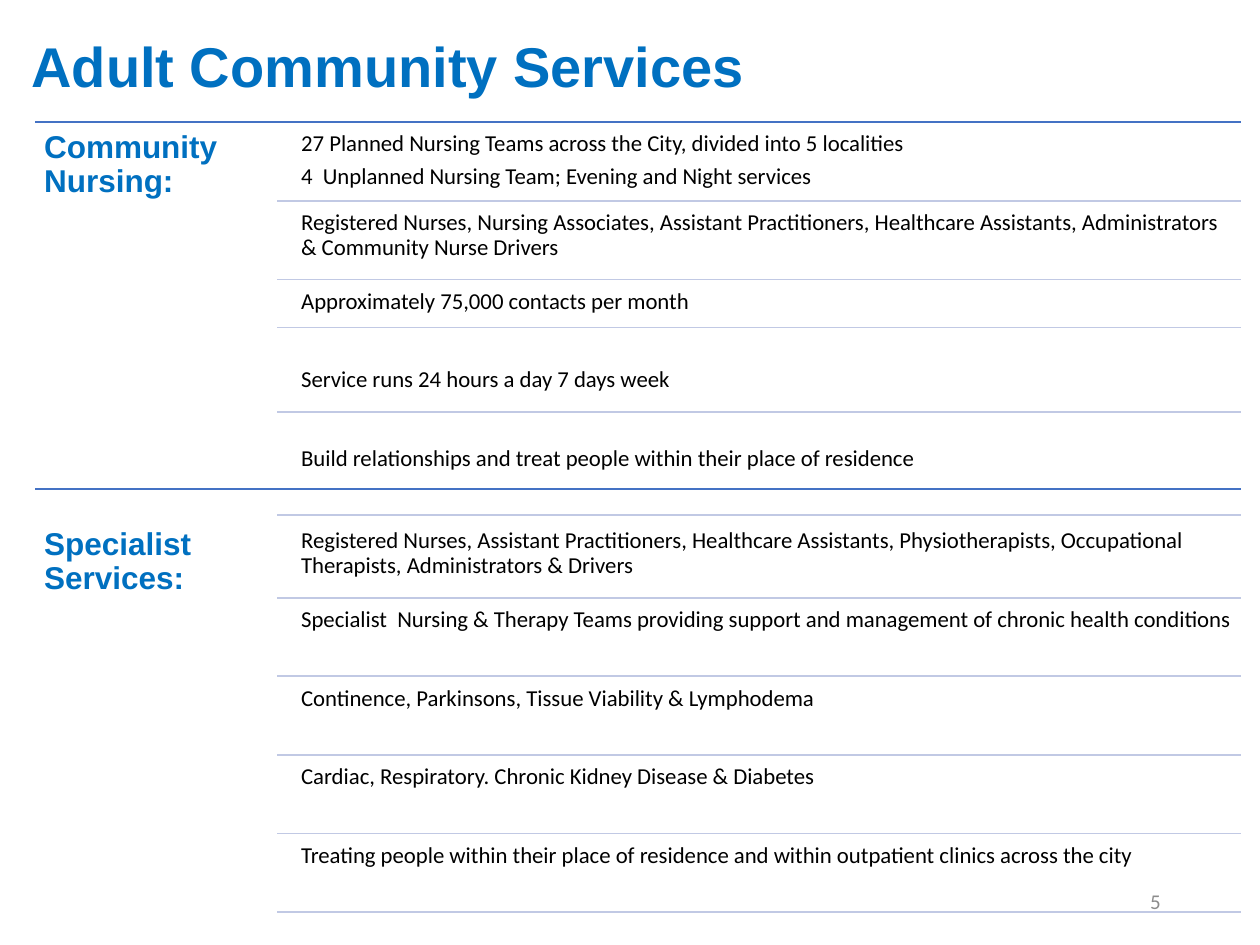
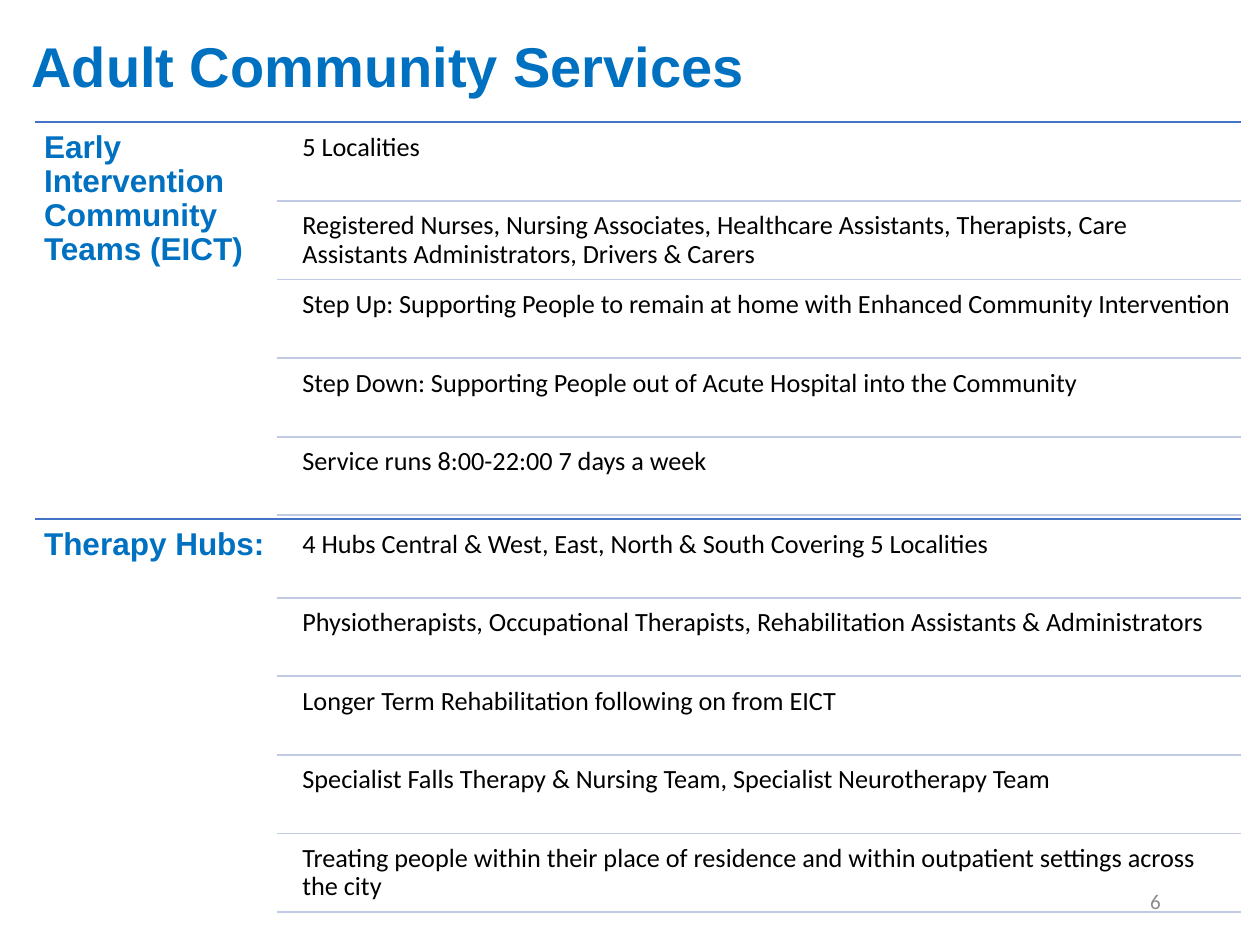
from pptx import Presentation
from pptx.dml.color import RGBColor as Rgb
from pptx.enum.shapes import MSO_CONNECTOR as Conn
from pptx.enum.text import MSO_ANCHOR as Anchor, MSO_AUTO_SIZE as Fit, PP_ALIGN as Align
from pptx.oxml.ns import qn
from pptx.util import Inches, Pt
from lxml.etree import SubElement as Sub

TITLE = "Adult Community Services"
SLIDES = [
    {"page": "5", "size": 13, "pad": 0.05, "moved": {(0, 2): 2.6, (0, 3): 3.27}, "tops": [0.97, 3.88],
     "blocks": [
         ("Community Nursing:", [
             ["27 Planned Nursing Teams across the City, divided into 5 localities",
              "4  Unplanned Nursing Team; Evening and Night services"],
             ["Registered Nurses, Nursing Associates, Assistant Practitioners, Healthcare Assistants, "
              "Administrators & Community Nurse Drivers"],
             ["Approximately 75,000 contacts per month"],
             ["Service runs 24 hours a day 7 days week"],
             ["Build relationships and treat people within their place of residence"]]),
         ("Specialist Services:", [
             ["Registered Nurses, Assistant Practitioners, Healthcare Assistants, Physiotherapists, "
              "Occupational Therapists, Administrators & Drivers"],
             ["Specialist  Nursing & Therapy Teams providing support and management of chronic "
              "health conditions"],
             ["Continence, Parkinsons, Tissue Viability & Lymphodema"],
             ["Cardiac, Respiratory. Chronic Kidney Disease & Diabetes"],
             ["Treating people within their place of residence and within outpatient clinics "
              "across the city"]])]},
    {"page": "6", "size": 15, "pad": 0.06, "moved": {}, "tops": [0.97, 4.12],
     "blocks": [
         ("Early Intervention Community Teams (EICT)", [
             ["5 Localities"],
             ["Registered Nurses, Nursing Associates, Healthcare Assistants, Therapists, Care "
              "Assistants Administrators, Drivers & Carers"],
             ["Step Up: Supporting People to remain at home with Enhanced Community Intervention"],
             ["Step Down: Supporting People out of Acute Hospital into the Community"],
             ["Service runs 8:00-22:00 7 days a week"]]),
         ("Therapy Hubs:", [
             ["4 Hubs Central & West, East, North & South Covering 5 Localities"],
             ["Physiotherapists, Occupational Therapists, Rehabilitation Assistants & Administrators"],
             ["Longer Term Rehabilitation following on from EICT"],
             ["Specialist Falls Therapy & Nursing Team, Specialist Neurotherapy Team"],
             ["Treating people within their place of residence and within outpatient settings "
              "across the city"]])]},
]

COLORS = {"head": "0070C0", "body": "000000", "page": "8C8C8C", "rule": "4472C4", "thin": "C1C9E4"}
LEFT, RIGHT, TOP = 0.28, 9.85, 0.97
BLOCK, GAP = 3.15, 0.03
STEP = (BLOCK - GAP) / 5
ROW = STEP - GAP
RULE_X, TEXT_X = 2.2, 2.34


def style(par, font, size, color, bold=False):
    for run in par.runs:
        run.font.name = font
        run.font.size = Pt(size)
        run.font.bold = bold
        run.font.color.rgb = Rgb.from_string(COLORS[color])


def add_text(slide, box, lines, pad, font, size, color, bold=False):
    frame = slide.shapes.add_textbox(*map(Inches, box)).text_frame
    frame.word_wrap = True
    frame.margin_left = frame.margin_right = frame.margin_top = frame.margin_bottom = Inches(pad)
    frame.text = "\n".join(lines)
    for par in frame.paragraphs:
        par.line_spacing = 0.9
        par.space_after = Pt(round(size * 0.35, 1))
        style(par, font, size, color, bold)


def add_rule(slide, x, y, color):
    line = slide.shapes.add_connector(Conn.STRAIGHT, Inches(x), Inches(y), Inches(RIGHT), Inches(y))
    line.line.width = Pt(1)
    line.line.color.rgb = Rgb.from_string(COLORS[color])
    Sub(line._element.spPr, qn("a:effectLst"))


def add_title(slide):
    title = slide.shapes.title
    title.left, title.top, title.width, title.height = map(Inches, (0.15, 0.28, 8.87, 0.54))
    frame = title.text_frame
    frame.text = TITLE
    frame.auto_size = Fit.NONE
    frame.vertical_anchor = Anchor.MIDDLE
    par = frame.paragraphs[0]
    par.alignment = Align.LEFT
    par.line_spacing = 0.9
    style(par, "Arial", 32, "head", True)


def add_page(slide, page):
    frame = slide.shapes.add_textbox(*map(Inches, (7.06, 6.95, 2.25, 0.4))).text_frame
    frame.word_wrap = True
    frame.vertical_anchor = Anchor.MIDDLE
    frame.text = page
    frame.paragraphs[0].alignment = Align.RIGHT
    style(frame.paragraphs[0], "Calibri", 12, "page")


def add_block(slide, data, nth):
    head, rows = data["blocks"][nth]
    top = TOP + nth * BLOCK
    add_text(slide, (LEFT, top, 1.91, BLOCK), [head], 0.07, "Arial", 18, "head", True)
    for i, lines in enumerate(rows):
        y = top + GAP + i * STEP
        add_text(slide, (TEXT_X, y, RIGHT - TEXT_X, ROW), lines, data["pad"], "Calibri", data["size"], "body")
        add_rule(slide, RULE_X, data["moved"].get((nth, i), y + ROW), "thin")
    add_rule(slide, LEFT, data["tops"][nth], "rule")


def main():
    prs = Presentation()
    prs.slide_width, prs.slide_height = Inches(10), Inches(7.5)
    for data in SLIDES:
        slide = prs.slides.add_slide(prs.slide_layouts[5])
        add_title(slide)
        add_page(slide, data["page"])
        for nth in range(len(data["blocks"])):
            add_block(slide, data, nth)
    prs.save("out.pptx")


if __name__ == "__main__":
    main()
